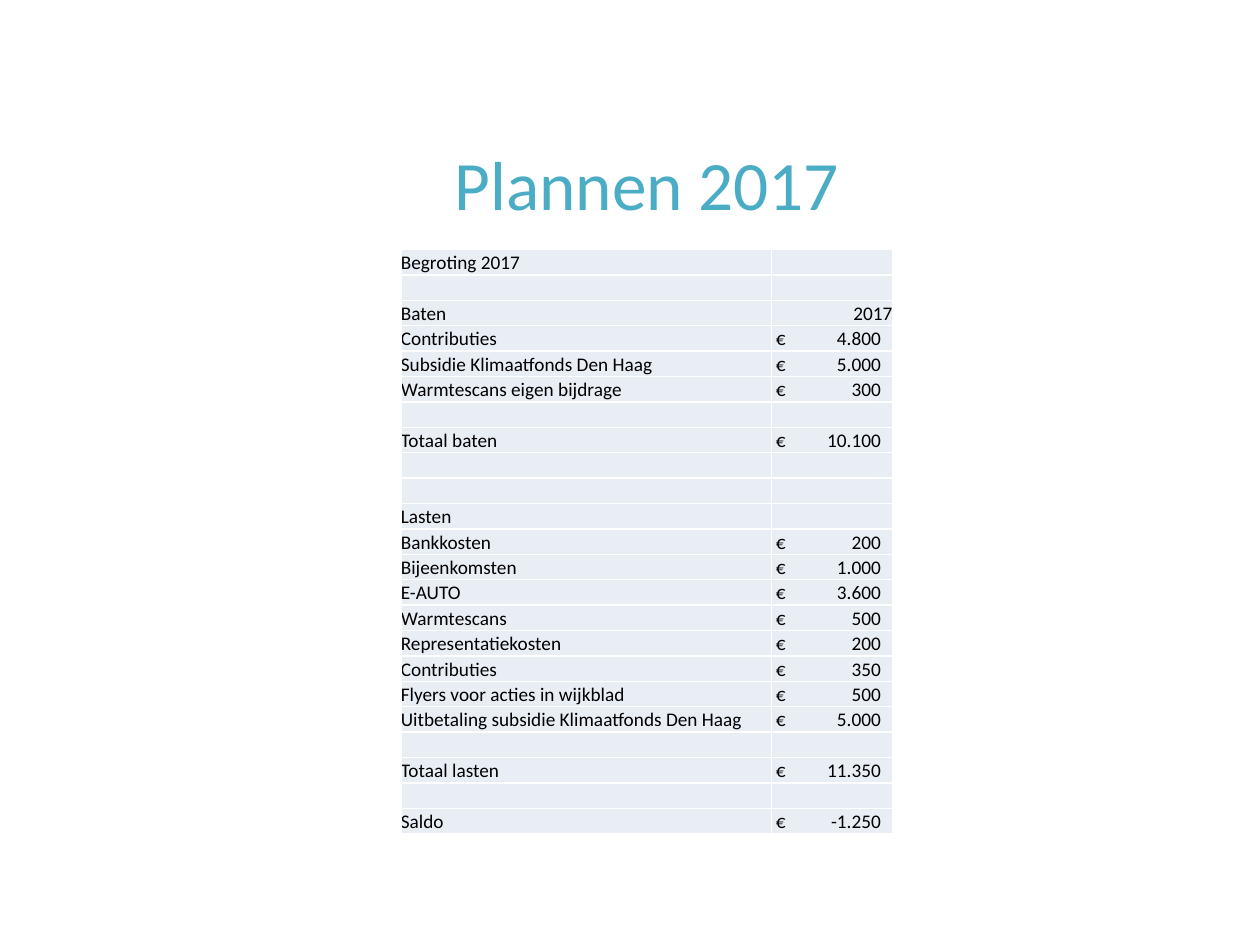
from lxml.etree import SubElement
from pptx import Presentation
from pptx.dml.color import RGBColor
from pptx.enum.text import MSO_ANCHOR as Anchor, PP_ALIGN as Align
from pptx.oxml.ns import qn
from pptx.util import Cm, Pt

COLOURS = {"title": "4BACC6", "text": "000000", "cell": "E9EDF4", "border": "FFFFFF"}

BUDGET = [
    ("Begroting 2017", ""),
    ("", ""),
    ("Baten", "2017"),
    ("Contributies", "€\t4.800"),
    ("Subsidie Klimaatfonds Den Haag", "€\t5.000"),
    ("Warmtescans eigen bijdrage", "€\t300"),
    ("", ""),
    ("Totaal baten", "€\t10.100"),
    ("", ""),
    ("", ""),
    ("Lasten", ""),
    ("Bankkosten", "€\t200"),
    ("Bijeenkomsten", "€\t1.000"),
    ("E-AUTO", "€\t3.600"),
    ("Warmtescans", "€\t500"),
    ("Representatiekosten", "€\t200"),
    ("Contributies", "€\t350"),
    ("Flyers voor acties in wijkblad", "€\t500"),
    ("Uitbetaling subsidie Klimaatfonds Den Haag", "€\t5.000"),
    ("", ""),
    ("Totaal lasten", "€\t11.350"),
    ("", ""),
    ("Saldo", "€\t-1.250"),
]


class SlideBuilder:
    font_name = "Calibri"
    table_size = 11
    amount_indent = Cm(0.09)
    amount_tab = Cm(2.12)

    def __init__(self, slide):
        self.slide = slide

    def style(self, paragraph, size, colour):
        font = paragraph.font
        font.name, font.size = self.font_name, Pt(size)
        font.color.rgb = RGBColor.from_string(COLOURS[colour])

    def title(self, text, left, top, width, height):
        frame = self.slide.shapes.add_textbox(left, top, width, height).text_frame
        frame.word_wrap = True
        frame.vertical_anchor = Anchor.MIDDLE
        frame.margin_top = frame.margin_bottom = 0
        paragraph = frame.paragraphs[0]
        paragraph.text = text
        paragraph.alignment = Align.CENTER
        self.style(paragraph, 39.6, "title")

    def borders(self, cell):
        properties = cell._tc.get_or_add_tcPr()
        for side in ("lnL", "lnR", "lnT", "lnB"):
            line = SubElement(properties, qn(f"a:{side}"), w=str(Pt(1)))
            fill = SubElement(line, qn("a:solidFill"))
            SubElement(fill, qn("a:srgbClr"), val=COLOURS["border"])

    def fill_cell(self, cell, text):
        self.borders(cell)
        cell.fill.solid()
        cell.fill.fore_color.rgb = RGBColor.from_string(COLOURS["cell"])
        cell.margin_left = cell.margin_right = cell.margin_top = cell.margin_bottom = 0
        cell.vertical_anchor = Anchor.BOTTOM
        paragraph = cell.text_frame.paragraphs[0]
        paragraph.text = text
        if "\t" in text:
            # Amounts end at a right tab stop
            cell.margin_left = self.amount_indent
            tabs = SubElement(paragraph._p.get_or_add_pPr(), qn("a:tabLst"))
            SubElement(tabs, qn("a:tab"), pos=str(self.amount_tab), algn="r")
        elif text.isdigit():
            paragraph.alignment = Align.RIGHT
        self.style(paragraph, self.table_size, "text")
        if not text:
            # Keeps empty rows as low as the others
            SubElement(paragraph._p, qn("a:endParaRPr"), sz=str(self.table_size * 100))

    def table(self, rows, left, top, widths, height):
        frame = self.slide.shapes.add_table(
            len(rows), len(widths), left, top, sum(widths), height)
        table = frame.table
        table.first_row = table.horz_banding = False
        for column, width in zip(table.columns, widths):
            column.width = width
        for row, texts in zip(table.rows, rows):
            for cell, text in zip(row.cells, texts):
                self.fill_cell(cell, text)


def main():
    presentation = Presentation()
    presentation.slide_width, presentation.slide_height = Cm(25.4), Cm(19.05)
    builder = SlideBuilder(presentation.slides.add_slide(presentation.slide_layouts[6]))

    # Heading
    builder.title("Plannen 2017", Cm(2.84), Cm(2.92), Cm(20.4), Cm(1.52))

    # Budget
    builder.table(BUDGET, Cm(8.08), Cm(5.03), [Cm(7.47), Cm(2.44)], Cm(11.79))

    presentation.save("out.pptx")


if __name__ == "__main__":
    main()
